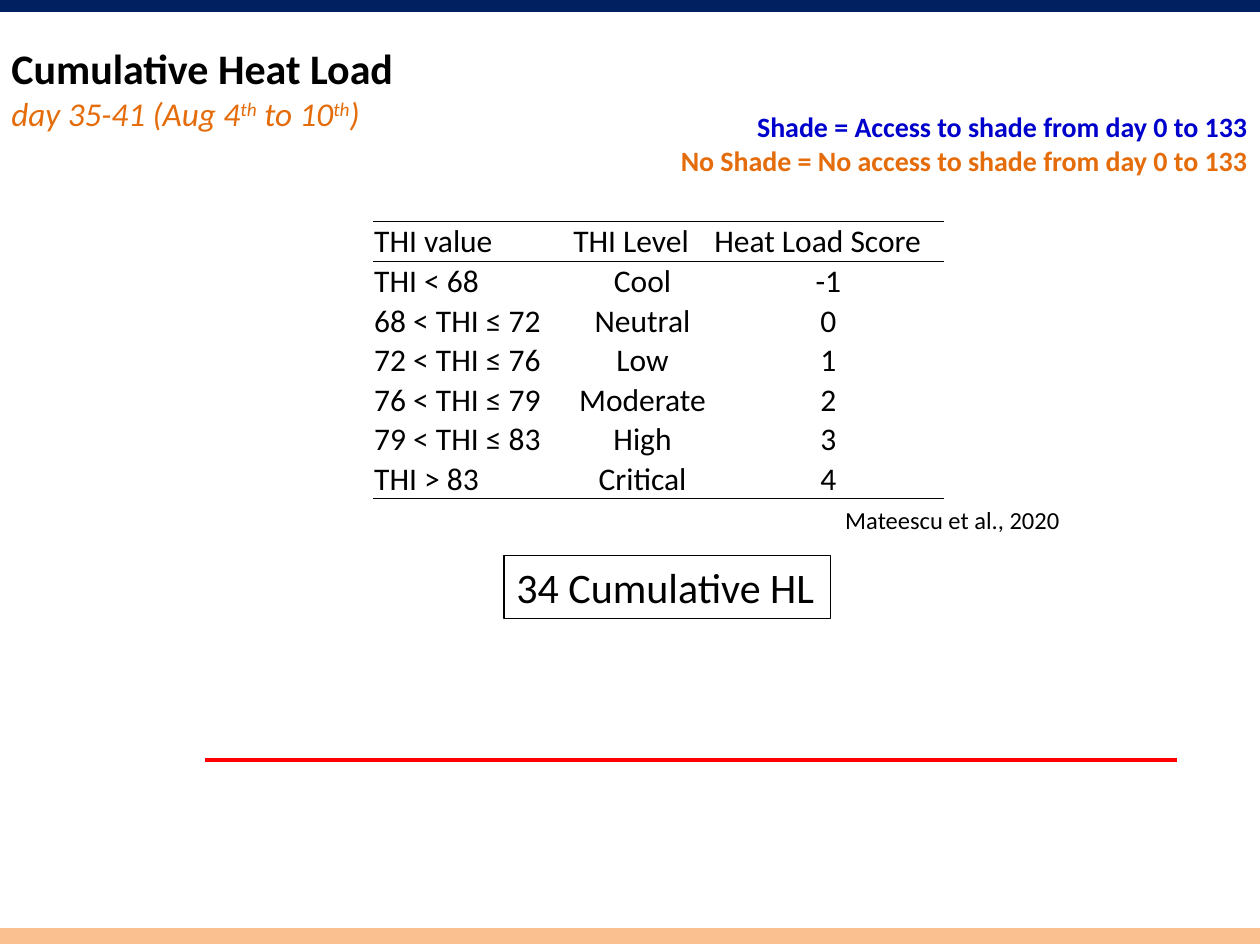
from dataclasses import dataclass

from lxml import etree
from pptx import Presentation
from pptx.dml.color import RGBColor
from pptx.enum.shapes import MSO_CONNECTOR, MSO_SHAPE
from pptx.enum.text import MSO_ANCHOR, MSO_AUTO_SIZE, PP_ALIGN
from pptx.oxml.ns import qn
from pptx.util import Inches, Pt

LEFT, CENTER, RIGHT = PP_ALIGN.LEFT, PP_ALIGN.CENTER, PP_ALIGN.RIGHT
TOP, MIDDLE = MSO_ANCHOR.TOP, MSO_ANCHOR.MIDDLE
RECTANGLE, STRAIGHT = MSO_SHAPE.RECTANGLE, MSO_CONNECTOR.STRAIGHT
FIT_SHAPE = MSO_AUTO_SIZE.SHAPE_TO_FIT_TEXT

FONT = "Calibri"
BLACK, WHITE, ORANGE = "000000", "FFFFFF", "E46C0A"


@dataclass
class Box:
    left: float
    top: float
    width: float
    height: float

    def emu(self) -> tuple:
        return tuple(Inches(v) for v in (self.left, self.top, self.width, self.height))


@dataclass
class Line:
    text: str
    size: float
    color: str = BLACK
    bold: bool = False
    align: PP_ALIGN = LEFT


BARS = [
    (Box(0, -0.02, 10, 0.11), "002060"),
    (Box(0, 7.37, 10, 0.12), "FAC090"),
]
SUBTITLE = [("day 35-41 (Aug 4", False), ("th", True), (" to 10", False),
            ("th", True), (")", False)]
LEGEND = [
    Line("Shade = Access to shade from day 0 to 133", 16, "0000CC", True, RIGHT),
    Line("No Shade = No access to shade from day 0 to 133", 16, ORANGE, True, RIGHT),
]
COLUMN_WIDTHS = [1.58, 1.12, 1.83]
HEAT_LOAD_ROWS = [
    ("THI value", "THI Level", "Heat Load Score"),
    ("THI < 68", "Cool", "-1"),
    ("68 < THI ≤ 72", "Neutral", "0"),
    ("72 < THI ≤ 76", "Low", "1"),
    ("76 < THI ≤ 79", "Moderate", "2"),
    ("79 < THI ≤ 83", "High", "3"),
    ("THI > 83", "Critical", "4"),
]


def rgb(color: str) -> RGBColor:
    return RGBColor.from_string(color)


def set_font(font, size: float, color: str, bold: bool = False, italic: bool = False) -> None:
    font.name, font.size, font.bold, font.italic = FONT, Pt(size), bold, italic
    font.color.rgb = rgb(color)


def write_line(p, line: Line) -> None:
    p.text, p.alignment = line.text, line.align
    set_font(p.font, line.size, line.color, line.bold)


def add_bar(s, box: Box, color: str) -> None:
    sp = s.shapes.add_shape(RECTANGLE, *box.emu())
    sp.shadow.inherit = False
    sp.fill.solid()
    sp.fill.fore_color.rgb = sp.line.color.rgb = rgb(color)
    sp.line.width = Pt(0.75)


def add_text(s, box: Box, lines: list[Line], wrap: bool = False):
    sp = s.shapes.add_textbox(*box.emu())
    tf = sp.text_frame
    tf.word_wrap, tf.auto_size = wrap, FIT_SHAPE
    for i, line in enumerate(lines):
        write_line(tf.add_paragraph() if i else tf.paragraphs[0], line)
    return sp


def fill_title(s) -> None:
    title = s.shapes.title
    title.left, title.top, title.width, title.height = Box(-0.01, 0.29, 7.35, 1.01).emu()
    tf = title.text_frame
    tf.vertical_anchor, tf.word_wrap = TOP, True
    p = tf.paragraphs[0]
    p.alignment = LEFT
    r = p.add_run()
    r.text = "Cumulative Heat Load"
    set_font(r.font, 24, BLACK, bold=True)
    p.add_line_break()
    for text, raised in SUBTITLE:
        r = p.add_run()
        r.text = text
        set_font(r.font, 19, ORANGE, italic=True)
        if raised:
            r.font._element.set("baseline", "30000")


def set_borders(cell, ruled_edges: str) -> None:
    """Rule the named edges (from L, R, T, B) and clear the others."""
    tc_pr = cell._tc.get_or_add_tcPr()
    for edge in "LRTB":
        ln = etree.SubElement(tc_pr, qn(f"a:ln{edge}"), w=str(Pt(0.5)))
        if edge in ruled_edges:
            fill = etree.SubElement(ln, qn("a:solidFill"))
            etree.SubElement(fill, qn("a:srgbClr"), val=BLACK)
        else:
            etree.SubElement(ln, qn("a:noFill"))


def add_heat_load_table(s, box: Box) -> None:
    last = len(HEAT_LOAD_ROWS) - 1
    table = s.shapes.add_table(last + 1, len(COLUMN_WIDTHS), *box.emu()).table
    table.first_row = table.horz_banding = False
    for column, width in zip(table.columns, COLUMN_WIDTHS):
        column.width = Inches(width)
    edges = {0: "TB", 1: "T", last: "B"}
    for i, row in enumerate(HEAT_LOAD_ROWS):
        for j, text in enumerate(row):
            cell = table.cell(i, j)
            set_borders(cell, edges.get(i, ""))
            cell.fill.solid()
            cell.fill.fore_color.rgb = rgb(WHITE)
            cell.vertical_anchor = MIDDLE
            cell.margin_left = cell.margin_top = cell.margin_right = Inches(0.01)
            cell.margin_bottom = 0
            align = CENTER if i and j else LEFT
            write_line(cell.text_frame.paragraphs[0], Line(text, 18, align=align))


def add_rule(s, left: float, right: float, y: float, color: str) -> None:
    rule = s.shapes.add_connector(STRAIGHT, Inches(left), Inches(y), Inches(right), Inches(y))
    rule.line.color.rgb = rgb(color)
    rule.line.width = Pt(2)
    etree.SubElement(rule._element.spPr, qn("a:effectLst"))


def main() -> None:
    prs = Presentation()
    prs.slide_width, prs.slide_height = Inches(10), Inches(7.5)
    s = prs.slides.add_slide(prs.slide_layouts[5])
    for box, color in BARS:
        add_bar(s, box, color)
    fill_title(s)
    add_text(s, Box(4.33, 0.82, 5.67, 0.64), LEGEND, wrap=True)
    add_heat_load_table(s, Box(2.96, 1.76, 4.53, 2.2))
    add_text(s, Box(6.61, 3.96, 1.92, 0.34), [Line("Mateescu et al., 2020", 14)])
    add_rule(s, 1.63, 9.34, 6.03, "FF0000")
    total = add_text(s, Box(4, 4.41, 2.59, 0.5), [Line("34 Cumulative HL", 24)])
    total.line.color.rgb = rgb(BLACK)
    total.line.width = Pt(0.75)
    prs.save("out.pptx")


if __name__ == "__main__":
    main()
